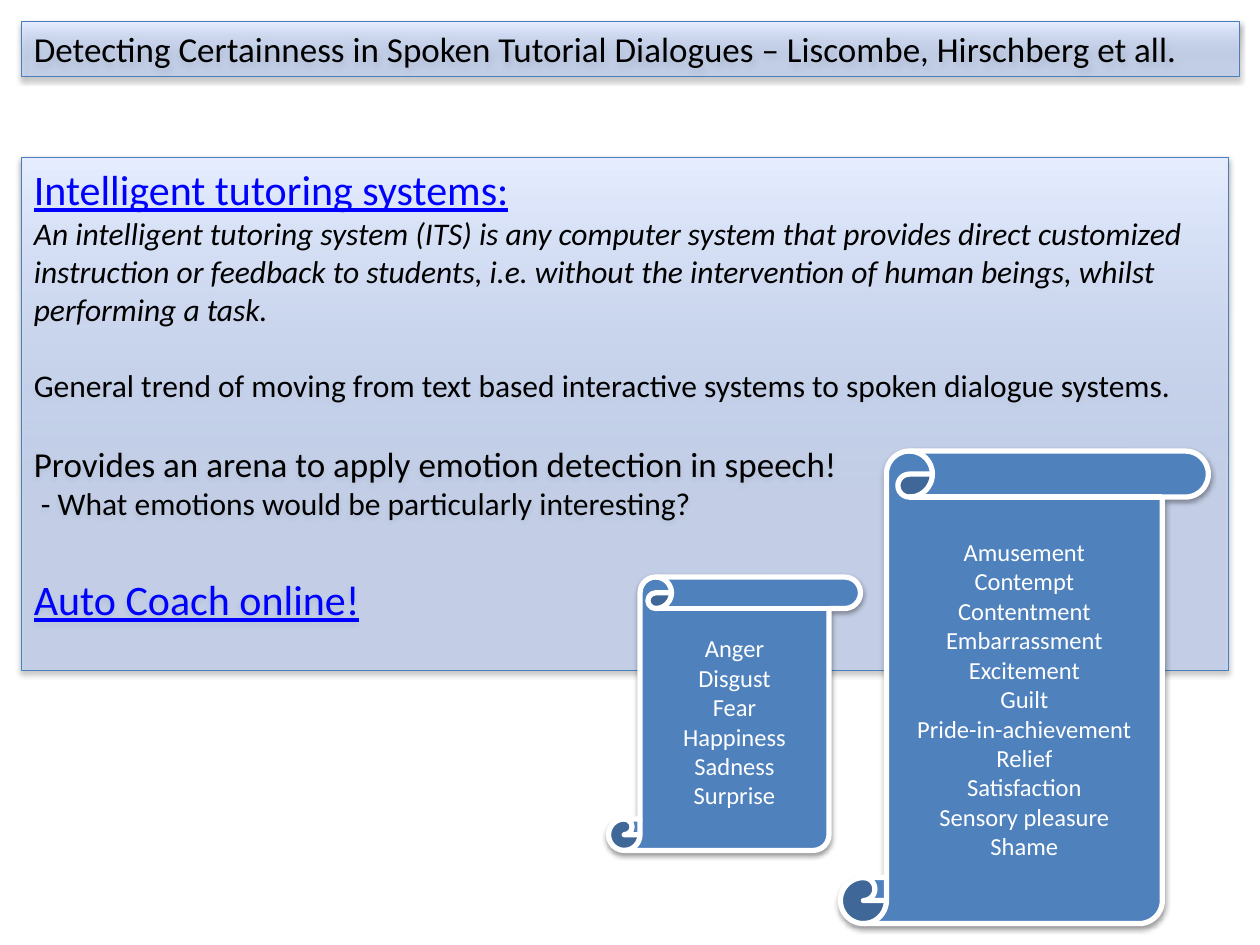
from dataclasses import dataclass

from lxml.etree import SubElement
from pptx import Presentation
from pptx.dml.color import RGBColor
from pptx.enum.shapes import MSO_SHAPE as Shape
from pptx.enum.text import MSO_ANCHOR as Anchor, PP_ALIGN as Align
from pptx.oxml.ns import qn
from pptx.util import Inches, Pt

INK, LINK, WHITE, BLUE, EDGE = "000000", "0000FF", "FFFFFF", "4F81BD", "4B7EBC"


@dataclass
class Box:
    left: float
    top: float
    width: float
    height: float


def color(code: str) -> RGBColor:
    return RGBColor.from_string(code)


def add_shape(slide, kind, box: Box, line: str, weight: float):
    shape = slide.shapes.add_shape(
        kind, Inches(box.left), Inches(box.top), Inches(box.width), Inches(box.height))
    shape.line.color.rgb = color(line)
    shape.line.width = Pt(weight)
    return shape


def set_alpha(tone, percent: int) -> None:
    SubElement(tone, qn("a:alpha"), val=str(percent * 1000))


def add_shadow(shape) -> None:
    """Cast a soft shadow straight down."""
    shape.shadow.inherit = False
    effects = shape.element.spPr.find(qn("a:effectLst"))
    outer = SubElement(effects, qn("a:outerShdw"), blurRad=str(Pt(3.1)),
                       dist=str(Pt(1.6)), dir="5400000", rotWithShape="0")
    set_alpha(SubElement(outer, qn("a:srgbClr"), val=INK), 38)


def add_text(frame, text: str, size: float = 18, tone: str = INK,
             align=Align.LEFT, before: float = 0, **style: bool) -> None:
    """Fill the first paragraph if it is free, else add one."""
    first = frame.paragraphs[0]
    para = frame.add_paragraph() if first.runs else first
    para.alignment = align
    para.space_before = Pt(before)
    run = para.add_run()
    run.text = text
    font = run.font
    font.name, font.size, font.color.rgb = "Calibri", Pt(size), color(tone)
    for name, value in style.items():
        setattr(font, name, value)


def add_panel(slide, box: Box):
    """Draw a pale gradient box and return its text frame."""
    shape = add_shape(slide, Shape.RECTANGLE, box, EDGE, 0.75)
    shape.fill.gradient()
    shape.fill.gradient_angle = 90
    stops = zip(shape.fill.gradient_stops, (0.35, 1), ("BFD4FF", "E6EEFF"))
    for stop, place, tone in stops:
        stop.position = place
        stop.color.rgb = color(tone)
    set_alpha(next(shape.element.spPr.iter(qn("a:srgbClr"))), 56)
    add_shadow(shape)
    frame = shape.text_frame
    frame.word_wrap = True
    frame.vertical_anchor = Anchor.TOP
    return frame


def add_scroll(slide, box: Box, words: list[str]) -> None:
    shape = add_shape(slide, Shape.VERTICAL_SCROLL, box, WHITE, 3)
    shape.fill.solid()
    shape.fill.fore_color.rgb = color(BLUE)
    add_shadow(shape)
    frame = shape.text_frame
    frame.word_wrap = True
    frame.vertical_anchor = Anchor.MIDDLE
    for word in words:
        add_text(frame, word, size=14, tone=WHITE, align=Align.CENTER)


def main() -> None:
    deck = Presentation()
    deck.slide_width, deck.slide_height = Inches(10), Inches(7.5)
    slide = deck.slides.add_slide(deck.slide_layouts[6])

    title = add_panel(slide, Box(0.17, 0.17, 9.67, 0.44))
    add_text(title, "Detecting Certainness in Spoken Tutorial Dialogues – "
             "Liscombe, Hirschberg et all.", size=20)

    body = add_panel(slide, Box(0.17, 1.25, 9.58, 4.07))
    add_text(body, "Intelligent tutoring systems:", size=24, tone=LINK, underline=True)
    add_text(body, "An intelligent tutoring system (ITS) is any computer system that "
             "provides direct customized instruction or feedback to students, i.e. "
             "without the intervention of human beings, whilst performing a task.",
             italic=True)
    add_text(body, "General trend of moving from text based interactive systems "
             "to spoken dialogue systems.", before=22)
    add_text(body, "Provides an arena to apply emotion detection in speech!",
             size=20, before=22)
    add_text(body, " - What emotions would be particularly interesting?")
    add_text(body, "Auto Coach online!", size=24, tone=LINK, before=29.3, underline=True)

    add_scroll(slide, Box(6.67, 3.58, 2.92, 3.75), [
        "Amusement", "Contempt", "Contentment", "Embarrassment", "Excitement", "Guilt",
        "Pride-in-achievement", "Relief", "Satisfaction", "Sensory pleasure", "Shame"])
    add_scroll(slide, Box(4.83, 4.58, 2, 2.17), [
        "Anger", "Disgust", "Fear", "Happiness", "Sadness", "Surprise"])

    deck.save("out.pptx")


if __name__ == "__main__":
    main()
